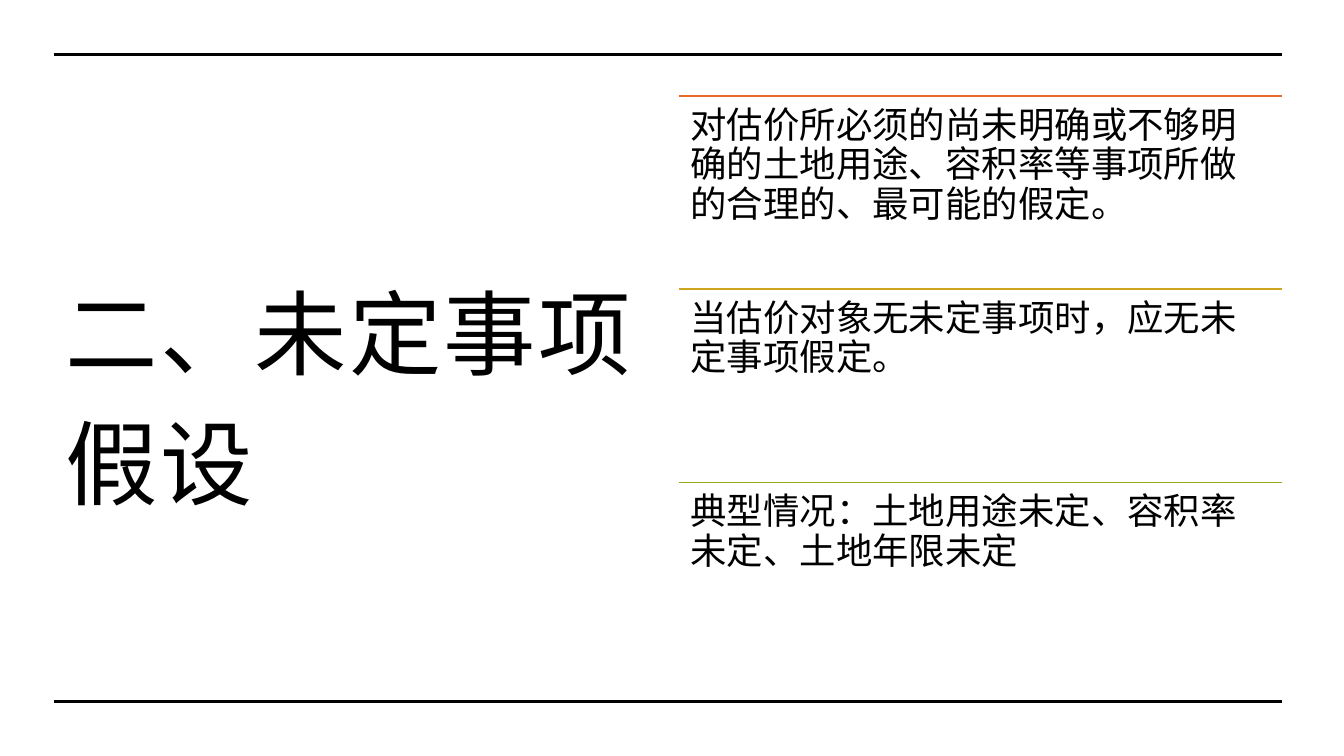
from pptx import Presentation
from pptx.dml.color import RGBColor
from pptx.enum.shapes import MSO_CONNECTOR
from pptx.enum.text import MSO_ANCHOR
from pptx.oxml.ns import qn
from pptx.util import Inches, Pt
from lxml import etree

STRAIGHT = MSO_CONNECTOR.STRAIGHT
TOP = MSO_ANCHOR.TOP
MIDDLE = MSO_ANCHOR.MIDDLE

BLACK = RGBColor(0x00, 0x00, 0x00)
ORANGE = RGBColor(0xE6, 0x6B, 0x29)
GOLD = RGBColor(0xCE, 0xA5, 0x1F)
GREEN = RGBColor(0x91, 0xAB, 0x1F)

TITLE = "二、未定事项假设"
POINTS = [
    (ORANGE, "对估价所必须的尚未明确或不够明确的土地用途、容积率等事项所做的合理的、最可能的假定。"),
    (GOLD, "当估价对象无未定事项时，应无未定事项假定。"),
    (GREEN, "典型情况：土地用途未定、容积率未定、土地年限未定"),
]

LEFT, RIGHT = 4, 95.4
RULE_ROWS = (7.2, 92.8)
TITLE_TOP, TITLE_WIDTH, TITLE_HEIGHT = 12.8, 46.05, 76.67
POINTS_LEFT, POINTS_TOP, POINT_HEIGHT = 50.55, 12.7, 25.55


class SlideBuilder:
    FONT = "Noto Sans CJK SC"
    COLUMNS = ROWS = 100

    def __init__(self, presentation):
        self.column = presentation.slide_width / self.COLUMNS
        self.row = presentation.slide_height / self.ROWS
        self.slide = presentation.slides.add_slide(presentation.slide_layouts[6])

    def x(self, columns):
        return round(columns * self.column)

    def y(self, rows):
        return round(rows * self.row)

    def rule(self, left, right, row, color, weight):
        line = self.slide.shapes.add_connector(
            STRAIGHT, self.x(left), self.y(row), self.x(right), self.y(row))
        line.line.color.rgb = color
        line.line.width = Pt(weight)
        etree.SubElement(line._element.spPr, qn("a:effectLst"))

    def text(self, wording, left, top, width, height, size, inset,
             line_spacing, anchor=TOP, space_after=0, tracking=0):
        frame = self.slide.shapes.add_textbox(
            self.x(left), self.y(top), self.x(width), self.y(height)).text_frame
        frame.word_wrap = True
        frame.vertical_anchor = anchor
        frame.margin_left = frame.margin_right = Inches(inset)
        frame.margin_top = frame.margin_bottom = Inches(inset)
        frame.text = wording
        paragraph = frame.paragraphs[0]
        paragraph.line_spacing = line_spacing
        paragraph.space_after = Pt(space_after)
        run = paragraph.runs[0]
        run.font.size = Pt(size)
        run.font.name = self.FONT
        run.font.color.rgb = BLACK
        properties = run._r.get_or_add_rPr()
        properties.set("spc", str(round(tracking * 100)))
        etree.SubElement(properties, qn("a:ea"), typeface=self.FONT)


def main():
    presentation = Presentation()
    presentation.slide_width = Inches(13.33)
    presentation.slide_height = Inches(7.5)
    builder = SlideBuilder(presentation)

    builder.text(TITLE, LEFT, TITLE_TOP, TITLE_WIDTH, TITLE_HEIGHT, size=66,
                 inset=0.12, line_spacing=1.18, anchor=MIDDLE, tracking=1.5)
    for row in RULE_ROWS:
        builder.rule(LEFT, RIGHT, row, BLACK, 2.25)
    for index, (color, wording) in enumerate(POINTS):
        top = POINTS_TOP + index * POINT_HEIGHT
        builder.rule(POINTS_LEFT, RIGHT, top, color, 1)
        builder.text(wording, POINTS_LEFT, top, RIGHT - POINTS_LEFT, POINT_HEIGHT,
                     size=26, inset=0.11, line_spacing=0.9, space_after=9.1)

    presentation.save("out.pptx")


if __name__ == "__main__":
    main()
